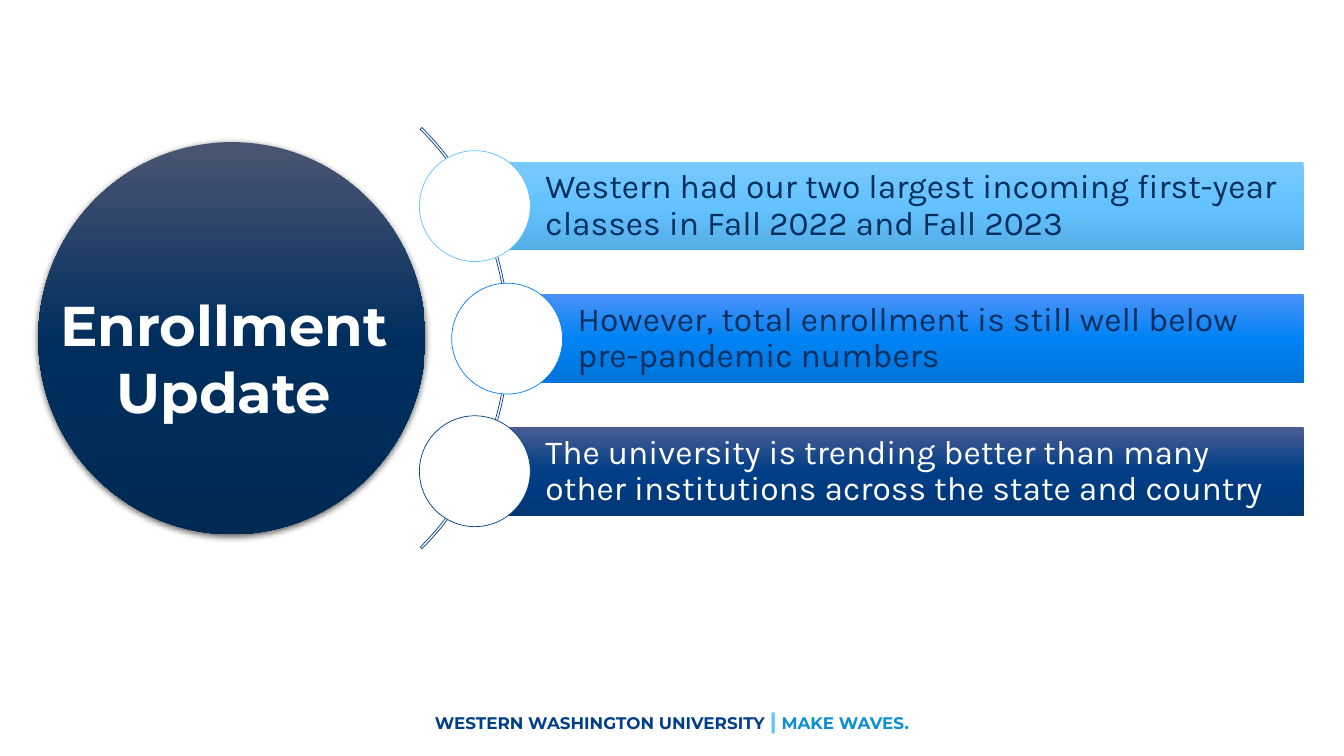
from copy import deepcopy
from dataclasses import dataclass

from lxml import etree
from pptx import Presentation
from pptx.dml.color import RGBColor
from pptx.enum import shapes, text
from pptx.oxml import ns
from pptx.util import Inches, Pt


@dataclass(frozen=True)
class Theme:
    white: str = "FFFFFF"
    navy: str = "002F5E"
    royal: str = "003E86"
    azure: str = "0083F4"
    sky: str = "63C2FF"
    university: str = "003F87"
    motto: str = "0C8FD3"
    heading_font: str = "Montserrat"
    body_font: str = "Karla"
    title_size: int = 40
    body_size: int = 24
    footer_size: int = 12
    divider_size: int = 16


@dataclass(frozen=True)
class Point:
    wording: str
    node_x: float
    gradient: tuple[str, str, str]
    text_color: str


@dataclass(frozen=True)
class FooterPart:
    wording: str
    size: int
    color: str


THEME = Theme()
SLIDE_WIDTH = 13.33
CENTER_Y = 3.36
ROW_PITCH = 1.315
NODE_SIZE = 1.1
BAR_HEIGHT = 0.88
BAR_RIGHT = 12.93

POINTS = [
    Point("Western had our two largest incoming first-year classes in Fall 2022 and Fall 2023",
          4.71, ("7AC9FF", THEME.sky, "56ADE5"), THEME.navy),
    Point("However, total enrollment is still well below pre-pandemic numbers",
          5.03, ("4B91F9", THEME.azure, "0074D9"), THEME.navy),
    Point("The university is trending better than many other institutions across the state and country",
          4.71, ("4B5D94", THEME.royal, "003777"), THEME.white),
]
FOOTER = [
    FooterPart("WESTERN WASHINGTON UNIVERSITY ", THEME.footer_size, THEME.university),
    FooterPart("|", THEME.divider_size, THEME.sky),
    FooterPart(" MAKE WAVES.", THEME.footer_size, THEME.motto),
]


def rgb(color: str) -> RGBColor:
    return RGBColor.from_string(color)


def add_plain(slide, kind, left: float, top: float, width: float, height: float):
    shape = slide.shapes.add_shape(kind, Inches(left), Inches(top), Inches(width), Inches(height))
    shape.shadow.inherit = False
    shape.line.fill.background()
    return shape


def outline(shape, color: str) -> None:
    shape.line.color.rgb = rgb(color)
    shape.line.width = Pt(0.5)


def fill_gradient(shape, colors: tuple[str, str, str]) -> None:
    """Fill from top to bottom with three evenly spaced colours."""
    shape.fill.gradient()
    shape.fill.gradient_angle = 270
    stop_list = shape._element.spPr.find(".//" + ns.qn("a:gsLst"))
    stop_list.append(deepcopy(stop_list[0]))
    for index, (stop, color) in enumerate(zip(shape.fill.gradient_stops, colors)):
        stop.position = index / 2
        stop.color.rgb = rgb(color)


def add_soft_shadow(shape) -> None:
    effects = shape._element.spPr.find(ns.qn("a:effectLst"))
    shadow = etree.SubElement(effects, ns.qn("a:outerShdw"), blurRad=str(Pt(4.5)),
                              dist=str(Pt(1.5)), dir="5400000", rotWithShape="0")
    black = etree.SubElement(shadow, ns.qn("a:srgbClr"), val="000000")
    etree.SubElement(black, ns.qn("a:alpha"), val="63000")


def add_point(slide, point: Point, center_y: float) -> None:
    # Bar with its statement
    bar = add_plain(slide, shapes.MSO_SHAPE.RECTANGLE, point.node_x, center_y - BAR_HEIGHT / 2,
                    BAR_RIGHT - point.node_x, BAR_HEIGHT)
    fill_gradient(bar, point.gradient)
    frame = bar.text_frame
    frame.word_wrap = True
    frame.vertical_anchor = text.MSO_ANCHOR.MIDDLE
    frame.margin_left = Inches(0.7)
    frame.margin_top = frame.margin_right = frame.margin_bottom = Inches(0.07)
    statement = frame.paragraphs[0]
    statement.text = point.wording
    statement.alignment = text.PP_ALIGN.LEFT
    statement.line_spacing = 0.9
    statement.font.name = THEME.body_font
    statement.font.size = Pt(THEME.body_size)
    statement.font.color.rgb = rgb(point.text_color)

    # Node over the start of the bar
    node = add_plain(slide, shapes.MSO_SHAPE.OVAL, point.node_x - NODE_SIZE / 2,
                     center_y - NODE_SIZE / 2, NODE_SIZE, NODE_SIZE)
    node.fill.solid()
    node.fill.fore_color.rgb = rgb(THEME.white)
    outline(node, point.gradient[1])


def add_title(slide) -> None:
    title = slide.shapes.title
    slide.shapes._spTree.append(title._element)  # bring in front of the disc
    title.left, title.top = Inches(0.18), Inches(2.83)
    title.width, title.height = Inches(4.23), Inches(1.45)
    frame = title.text_frame
    frame.text = "Enrollment\nUpdate"
    frame.word_wrap = True
    frame.auto_size = text.MSO_AUTO_SIZE.NONE
    frame.vertical_anchor = text.MSO_ANCHOR.TOP
    frame.margin_right = Inches(0.25)
    for line in frame.paragraphs:
        line.alignment = text.PP_ALIGN.CENTER
        line.font.name = THEME.heading_font
        line.font.size = Pt(THEME.title_size)
        line.font.bold = True
        line.font.color.rgb = rgb(THEME.white)


def add_footer(slide) -> None:
    footer = slide.shapes.add_textbox(0, Inches(6.95), Inches(SLIDE_WIDTH), Inches(0.4))
    frame = footer.text_frame
    frame.word_wrap = True
    frame.vertical_anchor = text.MSO_ANCHOR.MIDDLE
    tagline = frame.paragraphs[0]
    tagline.alignment = text.PP_ALIGN.CENTER
    tagline.font.name = THEME.heading_font
    tagline.font.bold = True
    for part in FOOTER:
        run = tagline.add_run()
        run.text = part.wording
        run.font.size = Pt(part.size)
        run.font.color.rgb = rgb(part.color)


def main() -> None:
    deck = Presentation()
    deck.slide_width, deck.slide_height = Inches(SLIDE_WIDTH), Inches(7.5)
    slide = deck.slides.add_slide(deck.slide_layouts[5])

    # Title disc
    disc = add_plain(slide, shapes.MSO_SHAPE.OVAL, 0.38, 1.41, 3.84, 3.89)
    fill_gradient(disc, ("4B5573", THEME.navy, "002A54"))
    add_soft_shadow(disc)

    # Thin arc linking the nodes
    arc = add_plain(slide, shapes.MSO_SHAPE.BLOCK_ARC, -0.86, 0.4, 5.91, 5.91)
    arc.fill.background()
    outline(arc, THEME.royal)
    for index, value in enumerate((189, 27, 0.004)):
        arc.adjustments[index] = value

    # Points, spaced evenly about the middle row
    for row, point in enumerate(POINTS):
        add_point(slide, point, CENTER_Y + (row - 1) * ROW_PITCH)

    add_title(slide)
    add_footer(slide)
    deck.save("out.pptx")


if __name__ == "__main__":
    main()
